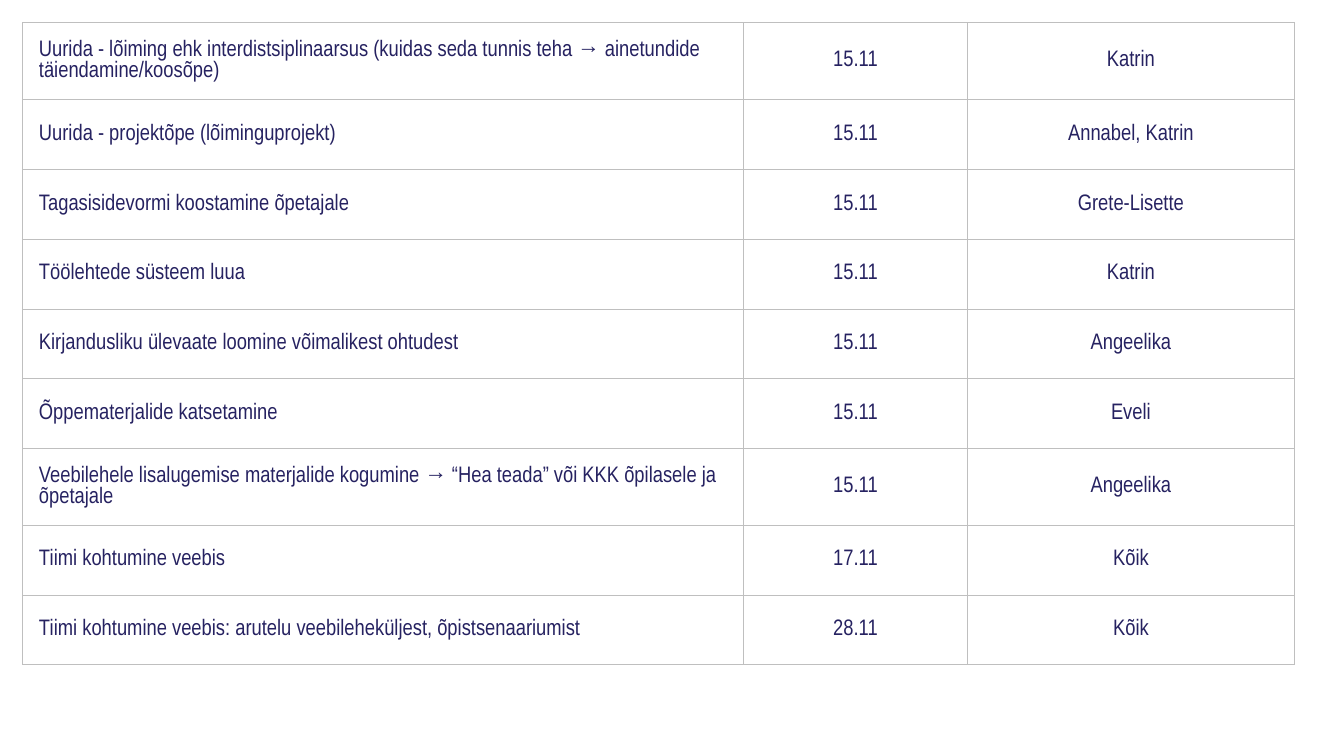
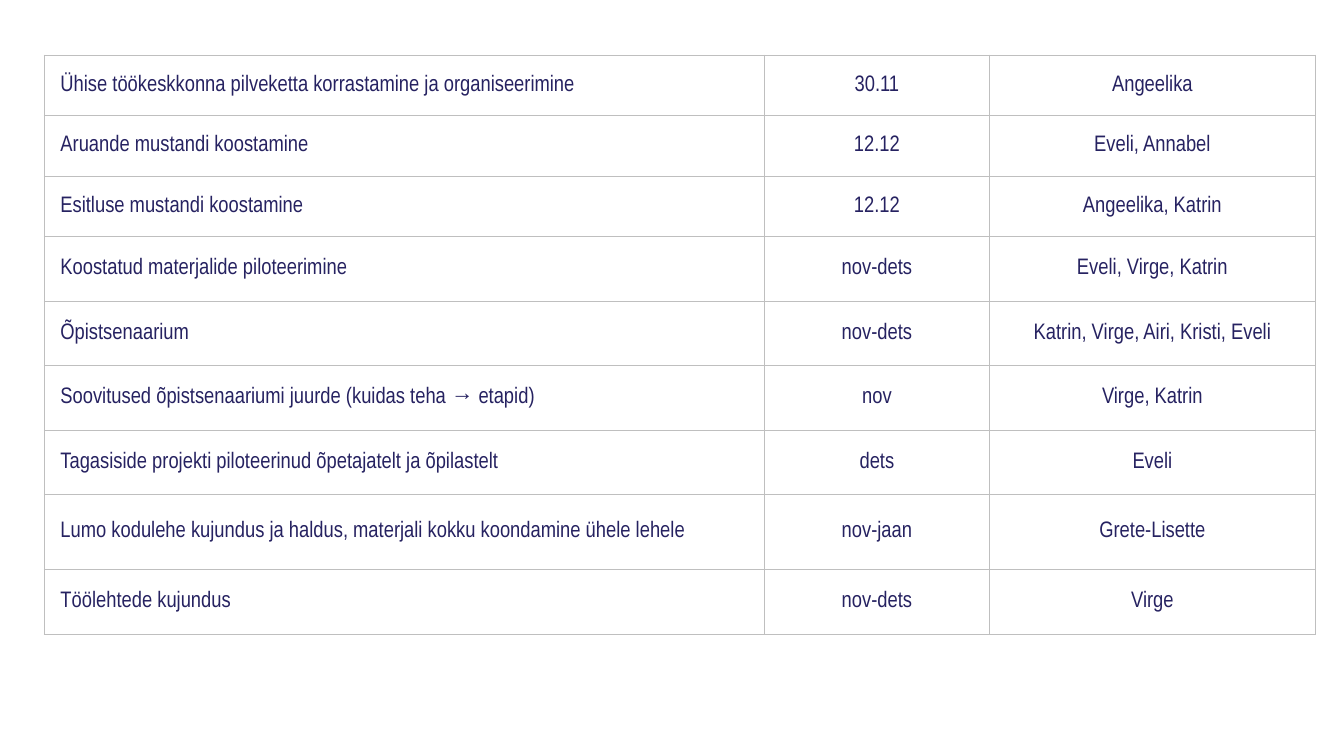
"""Build two slides of project tasks with their deadlines and owners."""
from lxml import etree
from pptx import Presentation
from pptx.dml.color import RGBColor
from pptx.enum.text import MSO_ANCHOR, PP_ALIGN
from pptx.oxml.ns import qn
from pptx.util import Inches, Pt

LEFT, CENTER = PP_ALIGN.LEFT, PP_ALIGN.CENTER
MIDDLE = MSO_ANCHOR.MIDDLE
NAVY = RGBColor(0x26, 0x22, 0x61)
GREY = RGBColor(0xBF, 0xBF, 0xBF)
FONT = "Arial Narrow"
COLUMN_WIDTHS = [5.36, 1.67, 2.43]
ALIGNMENTS = [LEFT, CENTER, CENTER]

NOVEMBER_TASKS = [
    (0.57, "Uurida - lõiming ehk interdistsiplinaarsus (kuidas seda tunnis teha → ainetundide täiendamine/koosõpe)",
     "15.11", "Katrin"),
    (0.52, "Uurida - projektõpe (lõiminguprojekt)", "15.11", "Annabel, Katrin"),
    (0.52, "Tagasisidevormi koostamine õpetajale", "15.11", "Grete-Lisette"),
    (0.52, "Töölehtede süsteem luua", "15.11", "Katrin"),
    (0.52, "Kirjandusliku ülevaate loomine võimalikest ohtudest", "15.11", "Angeelika"),
    (0.52, "Õppematerjalide katsetamine", "15.11", "Eveli"),
    (0.57, "Veebilehele lisalugemise materjalide kogumine → “Hea teada” või KKK õpilasele ja õpetajale",
     "15.11", "Angeelika"),
    (0.52, "Tiimi kohtumine veebis", "17.11", "Kõik"),
    (0.52, "Tiimi kohtumine veebis: arutelu veebileheküljest, õpistsenaariumist", "28.11", "Kõik"),
]
WINTER_TASKS = [
    (0.45, "Ühise töökeskkonna pilveketta korrastamine ja organiseerimine", "30.11", "Angeelika"),
    (0.45, "Aruande mustandi koostamine", "12.12", "Eveli, Annabel"),
    (0.45, "Esitluse mustandi koostamine", "12.12", "Angeelika, Katrin"),
    (0.48, "Koostatud materjalide piloteerimine", "nov-dets", "Eveli, Virge, Katrin"),
    (0.48, "Õpistsenaarium", "nov-dets", "Katrin, Virge, Airi, Kristi, Eveli"),
    (0.48, "Soovitused õpistsenaariumi juurde (kuidas teha → etapid)", "nov", "Virge, Katrin"),
    (0.48, "Tagasiside projekti piloteerinud õpetajatelt ja õpilastelt", "dets", "Eveli"),
    (0.56, "Lumo kodulehe kujundus ja haldus, materjali kokku koondamine ühele lehele",
     "nov-jaan", "Grete-Lisette"),
    (0.48, "Töölehtede kujundus", "nov-dets", "Virge"),
]


def add_borders(cell):
    """Draw a thin grey line on all four sides of a cell."""
    properties = cell._tc.get_or_add_tcPr()
    for side in ("lnL", "lnR", "lnT", "lnB"):
        line = etree.SubElement(properties, qn(f"a:{side}"), w=str(Pt(0.5)))
        fill = etree.SubElement(line, qn("a:solidFill"))
        etree.SubElement(fill, qn("a:srgbClr"), val=str(GREY))


presentation = Presentation()
presentation.slide_width = Inches(10)
presentation.slide_height = Inches(10 * 9 / 16)
blank_layout = presentation.slide_layouts[6]

for left, top, tasks in [(0.17, 0.17, NOVEMBER_TASKS), (0.33, 0.41, WINTER_TASKS)]:
    slide = presentation.slides.add_slide(blank_layout)
    height = sum(task[0] for task in tasks)
    table = slide.shapes.add_table(
        len(tasks), len(COLUMN_WIDTHS), Inches(left), Inches(top),
        Inches(sum(COLUMN_WIDTHS)), Inches(height)).table
    table.first_row = False
    table.horz_banding = False
    for column, width in zip(table.columns, COLUMN_WIDTHS):
        column.width = Inches(width)
    for row, (row_height, *texts) in zip(table.rows, tasks):
        row.height = Inches(row_height)
        for cell, text, alignment in zip(row.cells, texts, ALIGNMENTS):
            add_borders(cell)
            cell.fill.background()
            cell.vertical_anchor = MIDDLE
            cell.margin_left = cell.margin_right = Inches(0.12)
            cell.margin_top = cell.margin_bottom = 0
            cell.text = text
            paragraph = cell.text_frame.paragraphs[0]
            paragraph.alignment = alignment
            paragraph.font.name = FONT
            paragraph.font.size = Pt(12)
            paragraph.font.color.rgb = NAVY

presentation.save("out.pptx")
